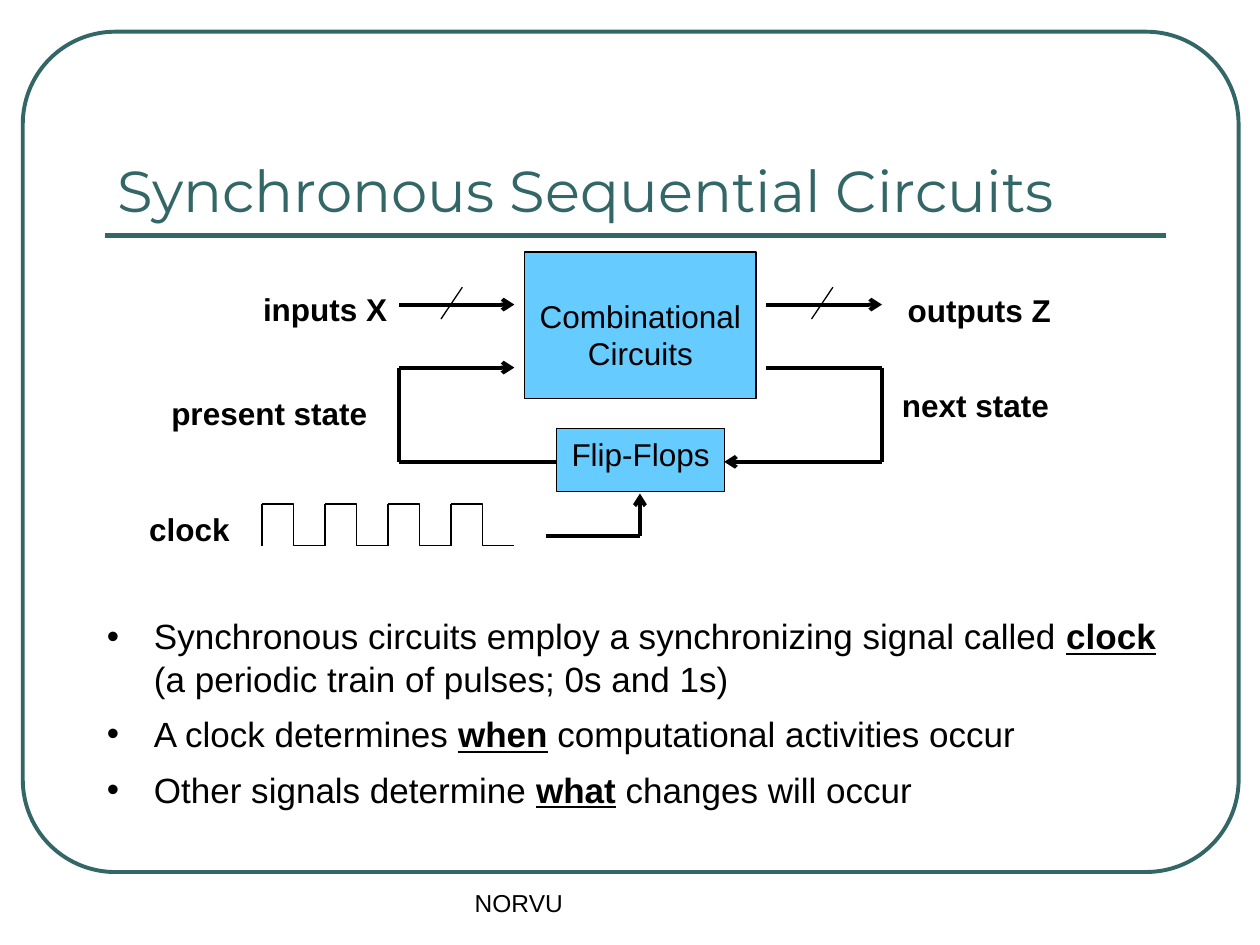
from typing import NamedTuple

from lxml import etree
from pptx import Presentation
from pptx.dml.color import RGBColor
from pptx.enum.shapes import MSO_CONNECTOR, MSO_SHAPE
from pptx.enum.text import MSO_ANCHOR, MSO_AUTO_SIZE, PP_ALIGN
from pptx.oxml.ns import qn
from pptx.util import Cm, Pt

STRAIGHT, ELBOW = MSO_CONNECTOR.STRAIGHT, MSO_CONNECTOR.ELBOW
RECTANGLE, ROUNDED = MSO_SHAPE.RECTANGLE, MSO_SHAPE.ROUNDED_RECTANGLE
LEFT, CENTER = PP_ALIGN.LEFT, PP_ALIGN.CENTER
TOP, BOTTOM = MSO_ANCHOR.TOP, MSO_ANCHOR.BOTTOM
NO_FIT = MSO_AUTO_SIZE.NONE

COLORS = {"teal": "336666", "block": "66CCFF", "ink": "000000"}


class Area(NamedTuple):
    left: float
    top: float
    width: float
    height: float


class Block(NamedTuple):
    text: str
    area: Area
    margin_top: float


class Label(NamedTuple):
    text: str
    left: float
    top: float
    width: float


class Wire(NamedTuple):
    x1: float
    y1: float
    x2: float
    y2: float
    arrow: bool = False
    width: float = 2.25


# Wire grid, in centimetres
LOOP_LEFT, BLOCK_LEFT, BLOCK_RIGHT, LOOP_RIGHT = 8.05, 10.37, 15.45, 17.78
SIGNAL_Y, STATE_Y, FLIP_Y, CLOCK_Y = 6.14, 7.41, 9.31, 10.8
FLIP_LEFT, FLIP_RIGHT, FLIP_MIDDLE, FLIP_BOTTOM = 11.22, 14.6, 12.9, 9.95
PULSE_LEFT, PULSE_TOP, PULSE_BOTTOM, PERIOD, PULSES = 5.28, 10.16, 11, 1.27, 4

BLOCKS = [
    Block("Combinational\nCircuits", Area(10.58, 5.08, 4.66, 2.96), 0.9),
    Block("Flip-Flops", Area(11.22, 8.64, 3.39, 1.27), 0.13),
]
LABELS = [
    Label("inputs X", 5.03, 5.72, 3.05),
    Label("outputs Z", 18.03, 5.74, 3.43),
    Label("next state", 17.91, 7.65, 3.51),
    Label("present state", 3.18, 7.82, 4.5),
    Label("clock", 2.74, 10.16, 2.16),
]
WIRES = [
    Wire(LOOP_LEFT, SIGNAL_Y, BLOCK_LEFT, SIGNAL_Y, arrow=True),
    Wire(BLOCK_RIGHT, SIGNAL_Y, LOOP_RIGHT, SIGNAL_Y, arrow=True),
    Wire(BLOCK_RIGHT, STATE_Y, LOOP_RIGHT, STATE_Y),
    Wire(LOOP_RIGHT, STATE_Y, LOOP_RIGHT, FLIP_Y),
    Wire(LOOP_RIGHT, FLIP_Y, FLIP_RIGHT, FLIP_Y, arrow=True),
    Wire(FLIP_LEFT, FLIP_Y, LOOP_LEFT, FLIP_Y),
    Wire(LOOP_LEFT, FLIP_Y, LOOP_LEFT, STATE_Y),
    Wire(LOOP_LEFT, STATE_Y, BLOCK_LEFT, STATE_Y, arrow=True),
    Wire(11, CLOCK_Y, FLIP_MIDDLE, CLOCK_Y),
    Wire(FLIP_MIDDLE, CLOCK_Y, FLIP_MIDDLE, FLIP_BOTTOM, arrow=True),
    # Bus slashes
    Wire(9.32, 5.79, 8.89, 6.43, width=0.75),
    Wire(16.79, 5.79, 16.36, 6.43, width=0.75),
]
# Each point: text before the key word, the key word, text after it
POINTS = [
    ("Synchronous circuits employ a synchronizing signal called ", "clock",
     " (a periodic train of pulses; 0s and 1s)"),
    ("A clock determines ", "when", " computational activities occur"),
    ("Other signals determine ", "what", " changes will occur"),
]


def rgb(name: str) -> RGBColor:
    return RGBColor.from_string(COLORS[name])


def place(shape, area: Area) -> None:
    shape.left, shape.top, shape.width, shape.height = map(Cm, area)


def add_span(para, text: str, *, size: float = 18, font: str = "Arial",
             color: str = "ink", key: bool = False, bold: bool = False) -> None:
    span = para.add_run()
    span.text = text
    span.font.name, span.font.size = font, Pt(size)
    span.font.color.rgb = rgb(color)
    span.font.bold = bold or key
    span.font.underline = key


def write(frame, text: str, *, align=LEFT, anchor=TOP, wrap: bool = True, **style) -> None:
    frame.auto_size, frame.word_wrap, frame.vertical_anchor = NO_FIT, wrap, anchor
    for number, line in enumerate(text.split("\n")):
        para = frame.add_paragraph() if number else frame.paragraphs[0]
        para.alignment = align
        add_span(para, line, **style)


def add_box(slide, kind, area: Area, line: str, width: float, fill: str = ""):
    box = slide.shapes.add_shape(kind, *map(Cm, area))
    box.shadow.inherit = False
    box.line.color.rgb, box.line.width = rgb(line), Pt(width)
    if fill:
        box.fill.solid()
        box.fill.fore_color.rgb = rgb(fill)
    else:
        box.fill.background()
    return box


def add_text(slide, text: str, area: Area, **style) -> None:
    box = slide.shapes.add_textbox(*map(Cm, area))
    write(box.text_frame, text, **style)


def add_wire(slide, wire: Wire, kind=STRAIGHT, color: str = "ink") -> None:
    line = slide.shapes.add_connector(kind, *map(Cm, wire[:4]))
    line.line.color.rgb, line.line.width = rgb(color), Pt(wire.width)
    properties = line._element.spPr
    if wire.arrow:
        etree.SubElement(properties.find(qn("a:ln")), qn("a:tailEnd"), type="arrow")
    etree.SubElement(properties, qn("a:effectLst"))


def add_points(frame) -> None:
    frame.auto_size, frame.word_wrap = NO_FIT, True
    for number, point in enumerate(POINTS):
        para = frame.add_paragraph() if number else frame.paragraphs[0]
        para.space_before = Pt(7.8)
        properties = para._p.get_or_add_pPr()
        properties.set("marL", str(Cm(0.95)))
        properties.set("indent", str(Cm(-0.95)))
        etree.SubElement(properties, qn("a:buFont"), typeface="Arial")
        etree.SubElement(properties, qn("a:buChar"), char="•")
        for part, text in enumerate(point):
            add_span(para, text, size=20, key=part == 1)


def main() -> None:
    deck = Presentation()
    deck.slide_width, deck.slide_height = Cm(25.4), Cm(19.05)
    slide = deck.slides.add_slide(deck.slide_layouts[1])
    title, body = slide.placeholders

    # Page frame and title rule
    page_frame = add_box(slide, ROUNDED, Area(0.46, 0.64, 24.51, 16.94), "teal", 2.25)
    page_frame.adjustments[0] = 0.11
    add_wire(slide, Wire(2.11, 4.75, 23.5, 4.75, width=3), color="teal")

    # Title and bullet list
    place(title, Area(2.11, 1.47, 21.36, 3.18))
    write(title.text_frame, "Synchronous Sequential Circuits", anchor=BOTTOM,
          size=33, font="Montserrat", color="teal")
    place(body, Area(1.9, 12.27, 22, 5.28))
    add_points(body.text_frame)

    # Circuit diagram
    for block in BLOCKS:
        box = add_box(slide, RECTANGLE, block.area, "ink", 0.75, "block")
        write(box.text_frame, block.text, align=CENTER)
        box.text_frame.margin_top = Cm(block.margin_top)
    for wire in WIRES:
        add_wire(slide, wire)
    for label in LABELS:
        add_text(slide, label.text, Area(label.left, label.top, label.width, 1.02),
                 align=CENTER, wrap=False, bold=True)

    # Clock pulses
    for pulse in range(PULSES):
        left = PULSE_LEFT + pulse * PERIOD
        add_wire(slide, Wire(left, PULSE_TOP, left, PULSE_BOTTOM, width=0.75))
        add_wire(slide, Wire(left, PULSE_TOP, left + PERIOD, PULSE_BOTTOM, width=0.75), ELBOW)

    # Footer
    add_text(slide, "NORVU", Area(9.32, 17.78, 8.03, 1.27), size=14)
    deck.save("out.pptx")


if __name__ == "__main__":
    main()
